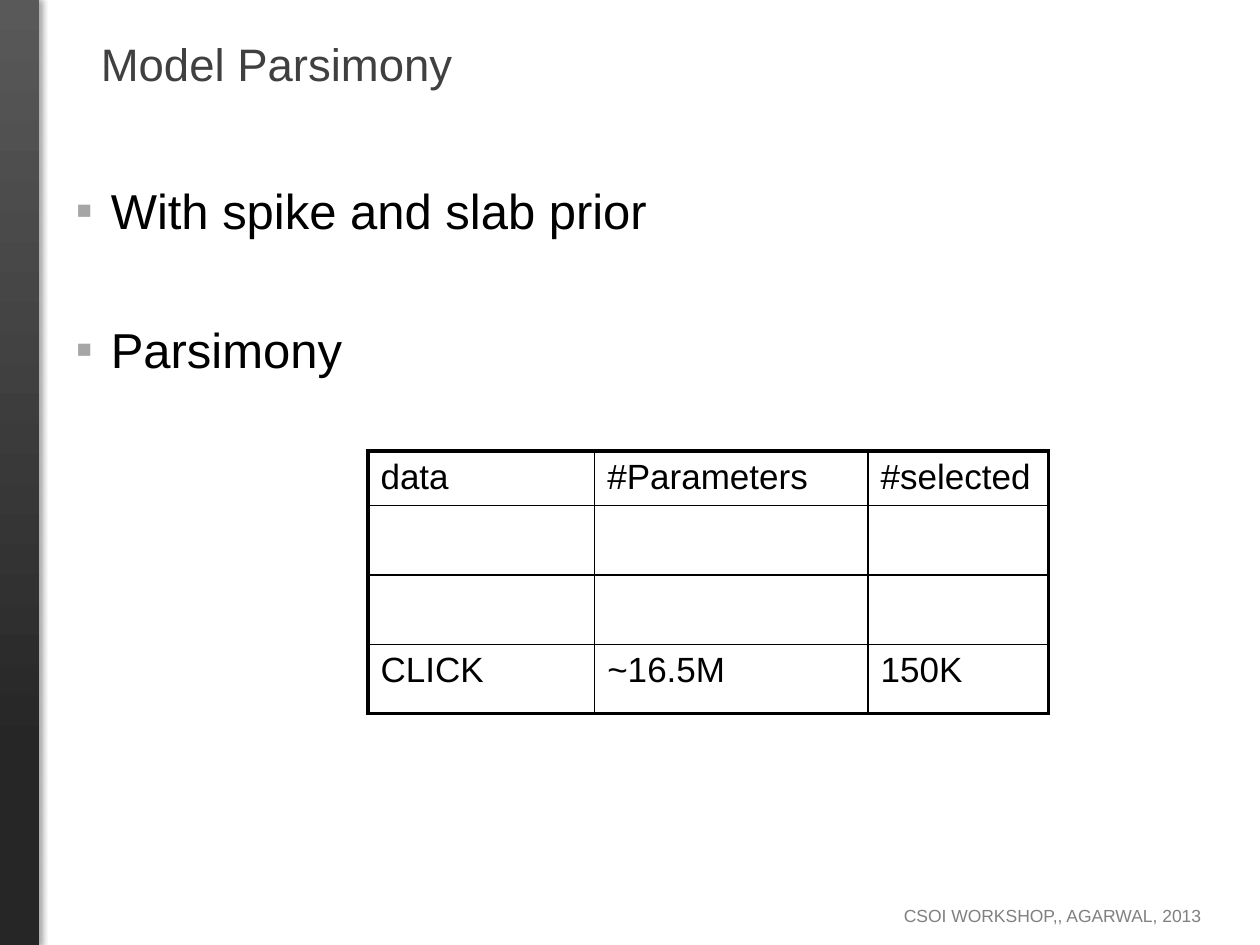
from dataclasses import dataclass

from lxml import etree
from pptx import Presentation
from pptx.dml.color import RGBColor
from pptx.enum.shapes import MSO_SHAPE
from pptx.enum.text import MSO_ANCHOR, PP_ALIGN
from pptx.oxml import parse_xml
from pptx.oxml.ns import nsdecls, qn
from pptx.util import Inches, Pt

RECTANGLE = MSO_SHAPE.RECTANGLE
MIDDLE, TOP = MSO_ANCHOR.MIDDLE, MSO_ANCHOR.TOP
LEFT, RIGHT = PP_ALIGN.LEFT, PP_ALIGN.RIGHT
TITLE_ONLY = 5

# Content
TITLE = "Model Parsimony"
BULLETS = ["With spike and slab prior", "Parsimony"]
FOOTER = "CSOI WORKSHOP,, AGARWAL, 2013"
TABLE = [
    ["data", "#Parameters", "#selected"],
    ["", "", ""],
    ["", "", ""],
    ["CLICK", "~16.5M", "150K"],
]
COLUMN_WIDTHS = [1.8, 2.17, 1.43]
ROW_HEIGHTS = [0.4, 0.55, 0.55, 0.55]


@dataclass(frozen=True)
class Theme:
    font: str = "Arial"
    title: str = "404040"
    text: str = "000000"
    footer: str = "808080"
    bullet: str = "A6A6A6"
    bar_dark: str = "262626"
    bar_light: str = "595959"
    title_size: int = 26
    body_size: int = 28
    table_size: int = 20
    footer_size: int = 10
    outer_line: float = 2.25
    inner_line: float = 1


THEME = Theme()


def add_run(paragraph, text, size, color):
    run = paragraph.add_run()
    run.text = text
    run.font.name = THEME.font
    run.font.size = Pt(size)
    run.font.color.rgb = RGBColor.from_string(color)


def place(shape, left, top, width, height):
    shape.left, shape.top = Inches(left), Inches(top)
    shape.width, shape.height = Inches(width), Inches(height)


def set_frame(frame, left, right, top=0.05, anchor=TOP):
    frame.word_wrap = True
    frame.vertical_anchor = anchor
    frame.margin_left, frame.margin_right = Inches(left), Inches(right)
    frame.margin_top, frame.margin_bottom = Inches(top), Inches(0.05)


def add_text_box(slide, left, top, width, height, inset_top=0.05):
    box = slide.shapes.add_textbox(
        Inches(left), Inches(top), Inches(width), Inches(height))
    set_frame(box.text_frame, 0, 0.1, inset_top)
    return box.text_frame


def add_bullet(paragraph, indent):
    properties = paragraph._p.get_or_add_pPr()
    properties.set("marL", str(Inches(indent)))
    properties.set("indent", str(-Inches(indent)))
    color = etree.SubElement(properties, qn("a:buClr"))
    etree.SubElement(color, qn("a:srgbClr"), val=THEME.bullet)
    etree.SubElement(properties, qn("a:buFont"), typeface=THEME.font)
    etree.SubElement(properties, qn("a:buChar"), char="▪")


def set_borders(cell, outer_edges):
    properties = cell._tc.get_or_add_tcPr()
    for edge, is_outer in outer_edges.items():
        width = THEME.outer_line if is_outer else THEME.inner_line
        properties.append(parse_xml(
            f'<a:{edge} {nsdecls("a")} w="{Pt(width)}"><a:solidFill>'
            f'<a:srgbClr val="{THEME.text}"/></a:solidFill></a:{edge}>'))


def add_side_bar(slide):
    bar = slide.shapes.add_shape(RECTANGLE, 0, 0, Inches(0.31), Inches(7.5))
    bar.line.fill.background()
    bar.fill.gradient()
    bar.fill.gradient_angle = 90
    stops = [(0.2, THEME.bar_dark), (1, THEME.bar_light)]
    for stop, (position, color) in zip(bar.fill.gradient_stops, stops):
        stop.position = position
        stop.color.rgb = RGBColor.from_string(color)
    # Soft shadow along the right edge
    bar.shadow.inherit = False
    effects = bar._element.spPr.find(qn("a:effectLst"))
    effects.append(parse_xml(
        f'<a:outerShdw {nsdecls("a")} blurRad="{Pt(3.1)}" dist="{Pt(1.8)}" '
        'dir="0" rotWithShape="0"><a:srgbClr val="000000">'
        '<a:alpha val="35000"/></a:srgbClr></a:outerShdw>'))


def add_parameter_table(slide):
    table = slide.shapes.add_table(
        len(ROW_HEIGHTS), len(COLUMN_WIDTHS), Inches(2.92), Inches(3.58),
        Inches(sum(COLUMN_WIDTHS)), Inches(sum(ROW_HEIGHTS))).table
    table.first_row = table.horz_banding = False
    for column, width in zip(table.columns, COLUMN_WIDTHS):
        column.width = Inches(width)
    for row, height in zip(table.rows, ROW_HEIGHTS):
        row.height = Inches(height)
    last_row, last_column = len(ROW_HEIGHTS) - 1, len(COLUMN_WIDTHS) - 1
    for i, row in enumerate(TABLE):
        for j, text in enumerate(row):
            cell = table.cell(i, j)
            set_borders(cell, {"lnL": j == 0, "lnR": j == last_column,
                               "lnT": i == 0, "lnB": i == last_row})
            cell.fill.background()
            paragraph = cell.text_frame.paragraphs[0]
            if text:
                add_run(paragraph, text, THEME.table_size, THEME.text)
            else:
                paragraph.font.size = Pt(THEME.table_size)


def main():
    presentation = Presentation()
    presentation.slide_width = Inches(10)
    presentation.slide_height = Inches(7.5)
    slide = presentation.slides.add_slide(
        presentation.slide_layouts[TITLE_ONLY])

    add_side_bar(slide)

    # Title
    title = slide.shapes.title
    place(title, 0.3, 0.09, 9.53, 0.82)
    set_frame(title.text_frame, 0.5, 0, anchor=MIDDLE)
    paragraph = title.text_frame.paragraphs[0]
    paragraph.alignment = LEFT
    add_run(paragraph, TITLE, THEME.title_size, THEME.title)

    # Bullets
    body = add_text_box(slide, 0.6, 1.34, 8.82, 5.32, inset_top=0.09)
    for index, text in enumerate(BULLETS):
        paragraph = body.add_paragraph() if index else body.paragraphs[0]
        if index:
            paragraph.space_before = Pt(46)
        add_bullet(paragraph, 0.28)
        add_run(paragraph, text, THEME.body_size, THEME.text)

    add_parameter_table(slide)

    # Footer
    paragraph = add_text_box(slide, 4.37, 7.13, 5.26, 0.35).paragraphs[0]
    paragraph.alignment = RIGHT
    add_run(paragraph, FOOTER, THEME.footer_size, THEME.footer)

    presentation.save("out.pptx")


if __name__ == "__main__":
    main()
